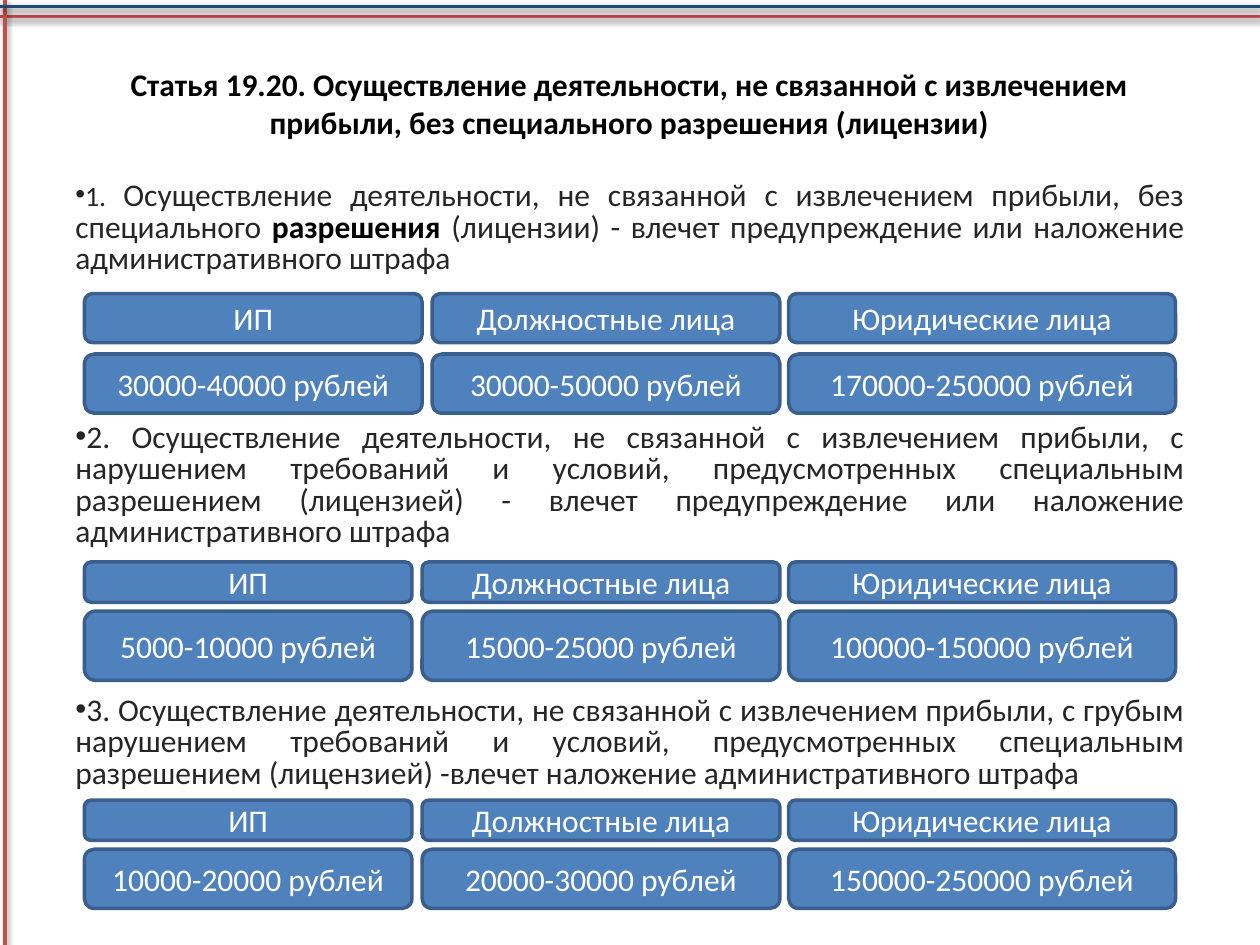
from lxml import etree
from pptx import Presentation
from pptx.dml.color import RGBColor
from pptx.enum.shapes import MSO_CONNECTOR, MSO_SHAPE
from pptx.enum.text import MSO_ANCHOR, PP_ALIGN
from pptx.oxml import parse_xml
from pptx.oxml.ns import nsdecls, qn
from pptx.util import Inches, Pt

STRAIGHT = MSO_CONNECTOR.STRAIGHT
ROUNDED = MSO_SHAPE.ROUNDED_RECTANGLE
MIDDLE, TOP = MSO_ANCHOR.MIDDLE, MSO_ANCHOR.TOP
CENTER, JUSTIFY = PP_ALIGN.CENTER, PP_ALIGN.JUSTIFY

TITLE = ("Статья 19.20. Осуществление деятельности, не связанной с извлечением "
         "прибыли, без специального разрешения (лицензии)")

# Each clause is a list of (text, size, colour, bold) spans.
DARK, BLACK = "262626", "000000"
CLAUSES = [
    [("1. ", 16, DARK, False),
     ("Осуществление деятельности, не связанной с извлечением прибыли, "
      "без специального ", 18, DARK, False),
     ("разрешения ", 18, BLACK, True),
     ("(лицензии) - влечет предупреждение или наложение "
      "административного штрафа", 18, DARK, False)],
    [("2. Осуществление деятельности, не связанной с извлечением прибыли, "
      "с нарушением требований и условий, предусмотренных специальным "
      "разрешением (лицензией) - влечет предупреждение или наложение "
      "административного штрафа", 18, DARK, False)],
    [("3. Осуществление деятельности, не связанной с извлечением прибыли, "
      "с грубым нарушением требований и условий, предусмотренных специальным "
      "разрешением (лицензией) -влечет наложение административного штрафа",
      18, DARK, False)],
]

OFFENDERS = ["ИП", "Должностные лица", "Юридические лица"]
WIDE_FIRST = [(0.67, 2.68), (3.43, 2.76), (6.26, 3.07)]
NARROW_FIRST = [(0.67, 2.6), (3.35, 2.84), (6.26, 3.07)]

# Columns (left, width), header row and fine row (top, height), fines in roubles.
FINE_GRIDS = [
    (WIDE_FIRST, (2.33, 0.39), (2.81, 0.47),
     ["30000-40000", "30000-50000", "170000-250000"]),
    (NARROW_FIRST, (4.46, 0.32), (4.85, 0.55),
     ["5000-10000", "15000-25000", "100000-150000"]),
    (NARROW_FIRST, (6.35, 0.32), (6.74, 0.47),
     ["10000-20000", "20000-30000", "150000-250000"]),
]


def color(value):
    return RGBColor.from_string(value)


class SlideBuilder:
    font = "Calibri"
    size = 18
    box_fill = "4F81BD"
    box_line = "3A5F8C"
    line_width = 2
    clause_pitch = 18
    clause_gap = 84

    def __init__(self, slide):
        self.slide = slide

    def format_font(self, font, value, size=None, bold=False):
        font.name = self.font
        font.size = Pt(size or self.size)
        font.bold = bold
        font.color.rgb = color(value)

    def rule(self, start, end, value):
        """Draw a border line with a soft shadow below it."""
        points = [Inches(number) for number in (*start, *end)]
        line = self.slide.shapes.add_connector(STRAIGHT, *points)
        line.line.color.rgb = color(value)
        line.line.width = Pt(self.line_width)
        line._element.spPr.append(parse_xml(
            f'<a:effectLst {nsdecls("a")}>'
            f'<a:outerShdw blurRad="{Pt(3.1)}" dist="{Pt(1.6)}" dir="5400000" '
            'rotWithShape="0"><a:srgbClr val="000000"><a:alpha val="38000"/>'
            '</a:srgbClr></a:outerShdw></a:effectLst>'))

    def title(self, text, left, top, width, height):
        title = self.slide.shapes.title
        title.left, title.top = Inches(left), Inches(top)
        title.width, title.height = Inches(width), Inches(height)
        frame = title.text_frame
        frame.text = text
        frame.vertical_anchor = MIDDLE
        para = frame.paragraphs[0]
        para.alignment = CENTER
        self.format_font(para.runs[0].font, BLACK, bold=True)

    def clauses(self, clauses, left, top, width, height):
        """Write bulleted clauses, leaving room for a grid after each one."""
        box = self.slide.shapes.add_textbox(
            Inches(left), Inches(top), Inches(width), Inches(height))
        frame = box.text_frame
        frame.word_wrap = True
        frame.vertical_anchor = TOP
        for index, spans in enumerate(clauses):
            para = frame.add_paragraph() if index else frame.paragraphs[0]
            para.alignment = JUSTIFY
            para.line_spacing = Pt(self.clause_pitch)
            if index:
                para.space_before = Pt(self.clause_gap)
            properties = para._p.get_or_add_pPr()
            etree.SubElement(properties, qn("a:buFont"), typeface="Arial")
            etree.SubElement(properties, qn("a:buChar"), char="•")
            for text, size, value, bold in spans:
                span = para.add_run()
                span.text = text
                self.format_font(span.font, value, size, bold)

    def box(self, text, left, top, width, height):
        box = self.slide.shapes.add_shape(
            ROUNDED, Inches(left), Inches(top), Inches(width), Inches(height))
        box.shadow.inherit = False
        box.fill.solid()
        box.fill.fore_color.rgb = color(self.box_fill)
        box.line.color.rgb = color(self.box_line)
        box.line.width = Pt(self.line_width)
        frame = box.text_frame
        frame.text = text
        frame.word_wrap = True
        frame.vertical_anchor = MIDDLE
        para = frame.paragraphs[0]
        para.alignment = CENTER
        self.format_font(para.runs[0].font, "FFFFFF")

    def fine_grid(self, columns, header_row, fine_row, fines):
        amounts = [f"{fine} рублей" for fine in fines]
        for (top, height), texts in ((header_row, OFFENDERS), (fine_row, amounts)):
            for (left, width), text in zip(columns, texts):
                self.box(text, left, top, width, height)


def main():
    deck = Presentation()
    deck.slide_width, deck.slide_height = Inches(10), Inches(7.5)
    page = SlideBuilder(deck.slides.add_slide(deck.slide_layouts[5]))
    page.rule((10, 0.13), (0, 0.13), "C0504D")
    page.rule((0.04, 0), (0.04, 7.5), "C0504D")
    page.rule((0, 0.05), (10, 0.05), "1F497D")
    page.clauses(CLAUSES, 0.5, 1.39, 9, 5.75)
    page.title(TITLE, 0.9, 0.35, 8.19, 0.93)
    for grid in FINE_GRIDS:
        page.fine_grid(*grid)
    deck.save("out.pptx")


if __name__ == "__main__":
    main()
